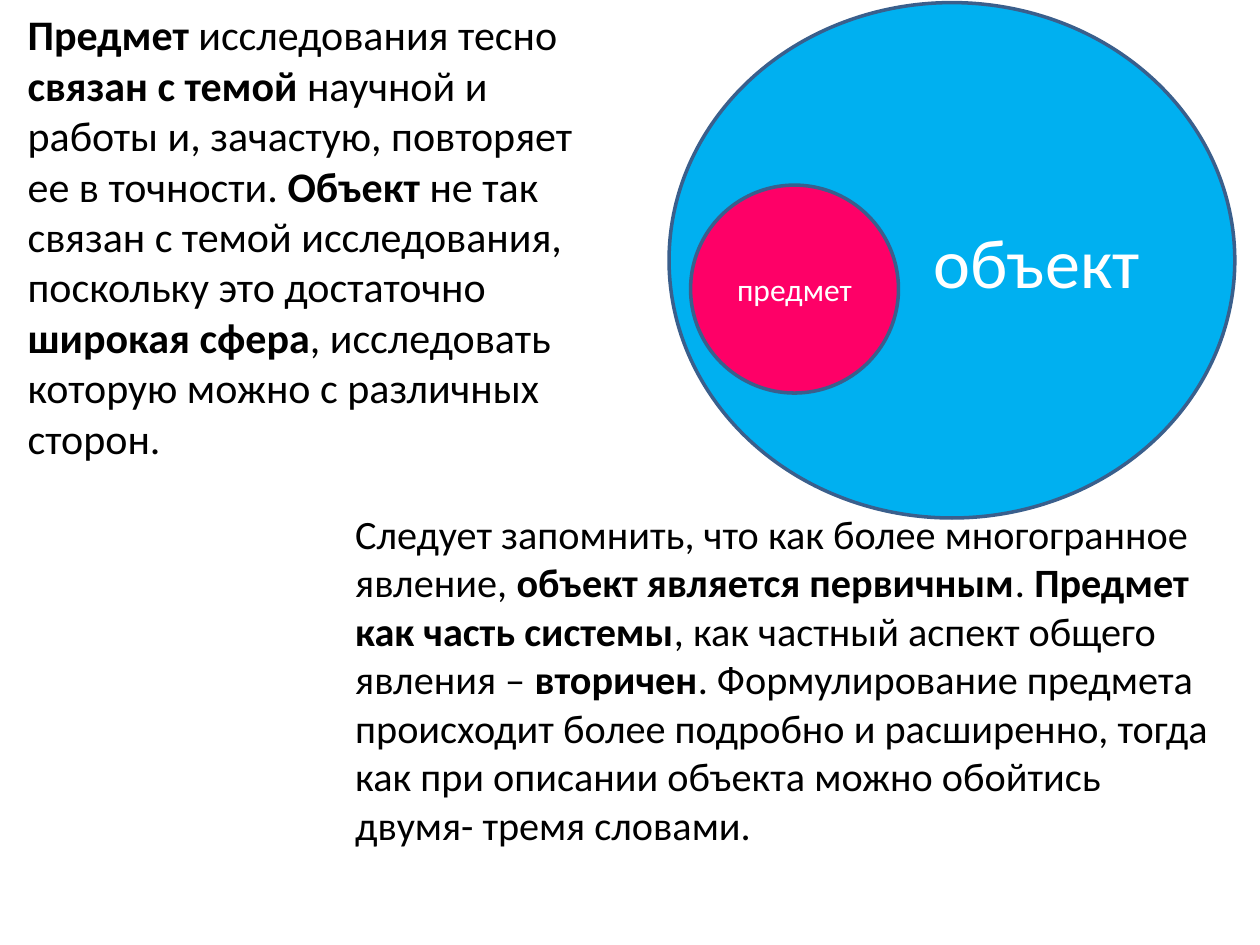
import pptx
import pptx.dml.color
import pptx.enum.shapes
import pptx.enum.text
import pptx.oxml.ns
import pptx.util
from lxml import etree

Pt = pptx.util.Pt
RGB = pptx.dml.color.RGBColor.from_string
ALIGN = pptx.enum.text.PP_ALIGN

THEME = {
    "font": "Calibri",
    "ink": RGB("000000"),
    "light": RGB("FFFFFF"),
    "outline": RGB("3A5F8C"),
    "outline_width": 2,
    "object_fill": RGB("00B0F0"),
    "subject_fill": RGB("FE0067"),
}

# Boxes are (left, top, width, height); each span is (wording, bold).
PASSAGES = [
    {
        "box": (8.6, 1.5, 345.6, 336.2), "size": 24, "pitch": 28.8,
        "spans": [
            ("Предмет", True),
            (" исследования тесно ", False),
            ("связан с темой ", True),
            ("научной и работы и, зачастую, повторяет ее в точности. ", False),
            ("Объект", True),
            (" не так связан с темой исследования, поскольку это достаточно ", False),
            ("широкая сфера", True),
            (", исследовать которую можно с различных сторон.", False),
        ],
    },
    {
        "box": (195.8, 287.3, 510.5, 252.7), "size": 23, "pitch": 27.7,
        "spans": [
            ("Следует запомнить, что как более многогранное явление, ", False),
            ("объект является первичным", True),
            (". ", False),
            ("Предмет как часть системы", True),
            (", как частный аспект общего явления – ", False),
            ("вторичен", True),
            (". Формулирование предмета происходит более подробно и расширенно, "
             "тогда как при описании объекта можно обойтись двумя- тремя словами.", False),
        ],
    },
]

ELLIPSES = [
    {"box": (382.3, 1.5, 323.3, 294.5), "label": "объект", "size": 40,
     "fill": "object_fill", "align": ALIGN.RIGHT},
    {"box": (394.6, 105.8, 118.8, 118.8), "label": "предмет", "size": 18,
     "fill": "subject_fill", "align": ALIGN.CENTER},
]


def apply_format(target, values):
    for name, value in values.items():
        setattr(target, name, value)


def place(shape, box):
    sides = ("left", "top", "width", "height")
    apply_format(shape, {side: Pt(length) for side, length in zip(sides, box)})


def add_span(para, wording, size, color, bold=False):
    span = para.add_run()
    span.text = wording
    apply_format(span.font, {"name": THEME["font"], "size": Pt(size), "bold": bold})
    span.font.color.rgb = THEME[color]


def remove_bullet(para):
    properties = para._p.get_or_add_pPr()
    properties.set("marL", "0")
    properties.set("indent", "0")
    etree.SubElement(properties, pptx.oxml.ns.qn("a:buNone"))


def fill_passage(placeholder, passage):
    place(placeholder, passage["box"])
    frame = placeholder.text_frame
    apply_format(frame, {"word_wrap": True,
                         "auto_size": pptx.enum.text.MSO_AUTO_SIZE.NONE})
    para = frame.paragraphs[0]
    remove_bullet(para)
    apply_format(para, {"space_before": Pt(0), "line_spacing": Pt(passage["pitch"])})
    for wording, bold in passage["spans"]:
        add_span(para, wording, passage["size"], "ink", bold)


def add_ellipse(page, ellipse):
    shape = page.shapes.add_shape(
        pptx.enum.shapes.MSO_SHAPE.OVAL, *map(Pt, ellipse["box"]))
    shape.shadow.inherit = False
    shape.fill.solid()
    shape.fill.fore_color.rgb = THEME[ellipse["fill"]]
    shape.line.color.rgb = THEME["outline"]
    shape.line.width = Pt(THEME["outline_width"])
    frame = shape.text_frame
    apply_format(frame, {"word_wrap": True,
                         "vertical_anchor": pptx.enum.text.MSO_ANCHOR.MIDDLE})
    para = frame.paragraphs[0]
    para.alignment = ellipse["align"]
    add_span(para, ellipse["label"], ellipse["size"], "light")


def main():
    deck = pptx.Presentation()
    apply_format(deck, {"slide_width": Pt(720), "slide_height": Pt(540)})
    page = deck.slides.add_slide(deck.slide_layouts.get_by_name("Two Content"))
    title, *bodies = page.placeholders
    title.element.getparent().remove(title.element)
    for placeholder, passage in zip(bodies, PASSAGES):
        fill_passage(placeholder, passage)
    for ellipse in ELLIPSES:
        add_ellipse(page, ellipse)
    deck.save("out.pptx")


if __name__ == "__main__":
    main()
